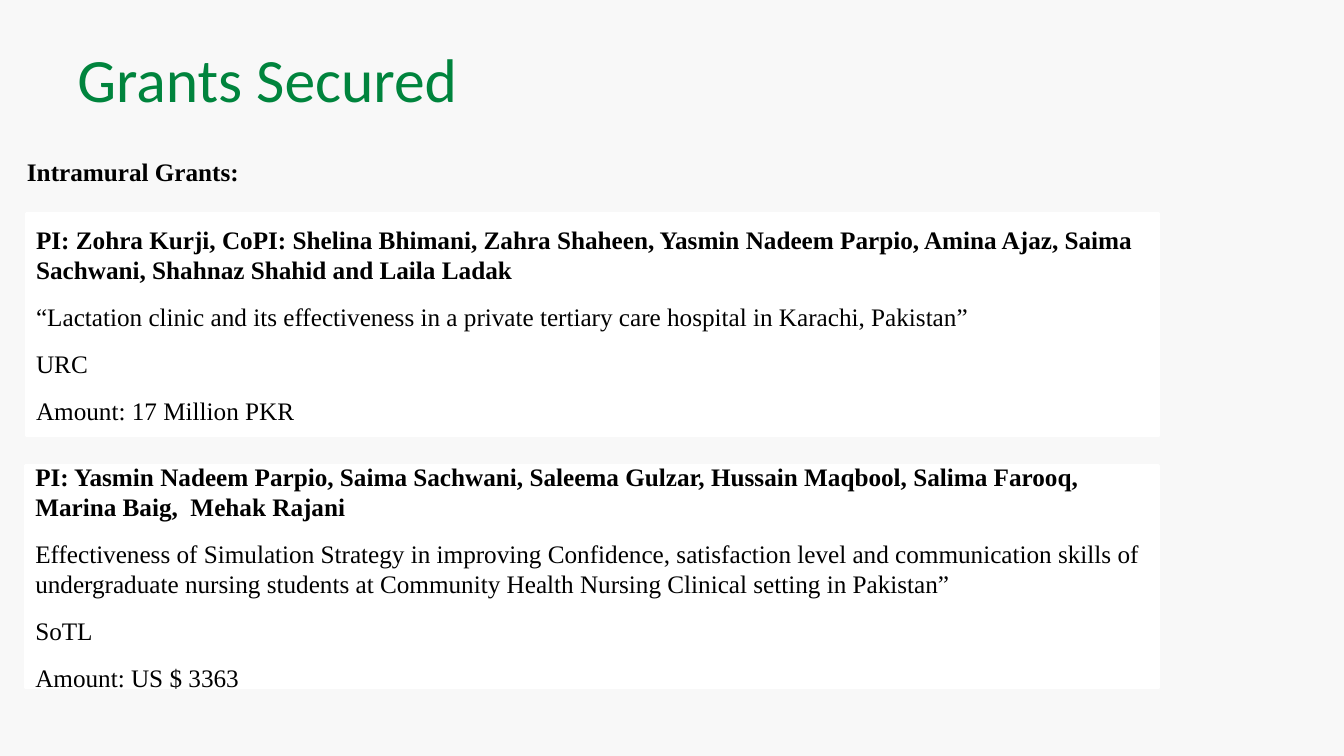
"""Builds the "Grants Secured" slide with two intramural grant panels."""
from pptx import Presentation
from pptx.dml.color import RGBColor
from pptx.enum.shapes import MSO_SHAPE
from pptx.enum.text import MSO_ANCHOR, PP_ALIGN
from pptx.util import Cm, Pt

TITLE = "Grants Secured"
HEADING = "Intramural Grants:"
GRANTS = [
    (0.66, 5.38, [
        "PI: Zohra Kurji, CoPI: Shelina Bhimani, Zahra Shaheen, Yasmin Nadeem Parpio, "
        "Amina Ajaz, Saima Sachwani, Shahnaz Shahid and Laila Ladak",
        "“Lactation clinic and its effectiveness in a private tertiary care hospital "
        "in Karachi, Pakistan”",
        "URC",
        "Amount: 17 Million PKR",
    ]),
    (0.64, 11.73, [
        "PI: Yasmin Nadeem Parpio, Saima Sachwani, Saleema Gulzar, Hussain Maqbool, "
        "Salima Farooq, Marina Baig,  Mehak Rajani",
        "Effectiveness of Simulation Strategy in improving Confidence, satisfaction level "
        "and communication skills of undergraduate nursing students at Community Health "
        "Nursing Clinical setting in Pakistan”",
        "SoTL",
        "Amount: US $ 3363",
    ]),
]

BACKGROUND = RGBColor(0xF8, 0xF8, 0xF8)
GREEN = RGBColor(0x00, 0x84, 0x3D)
BLACK = RGBColor(0, 0, 0)
WHITE = RGBColor(0xFF, 0xFF, 0xFF)
PANEL_WIDTH, PANEL_HEIGHT = 28.55, 5.61


def write(shape, lines, font_name, size, color, anchor, bold_first=False):
    """Fill a shape with one paragraph per line."""
    frame = shape.text_frame
    frame.word_wrap = True
    frame.vertical_anchor = anchor
    frame.text = "\n".join(lines)
    for index, paragraph in enumerate(frame.paragraphs):
        paragraph.alignment = PP_ALIGN.LEFT
        paragraph.space_after = Pt(12)
        paragraph.font.name = font_name
        paragraph.font.size = Pt(size)
        paragraph.font.color.rgb = color
        paragraph.font.bold = bold_first and index == 0


def main():
    """Lay out the title, heading and grant panels."""
    presentation = Presentation()
    presentation.slide_width, presentation.slide_height = Cm(33.87), Cm(19.05)
    slide = presentation.slides.add_slide(presentation.slide_layouts[6])
    slide.background.fill.solid()
    slide.background.fill.fore_color.rgb = BACKGROUND

    title = slide.shapes.add_textbox(Cm(1.7), Cm(0.76), Cm(30.48), Cm(2.41))
    write(title, [TITLE], "Calibri", 44, GREEN, MSO_ANCHOR.MIDDLE)

    heading = slide.shapes.add_textbox(Cm(0.43), Cm(3.81), Cm(18.19), Cm(1.03))
    write(heading, [HEADING], "Times New Roman", 18, BLACK, MSO_ANCHOR.TOP, True)

    for left, top, lines in GRANTS:
        panel = slide.shapes.add_shape(
            MSO_SHAPE.RECTANGLE, Cm(left), Cm(top), Cm(PANEL_WIDTH), Cm(PANEL_HEIGHT))
        panel.shadow.inherit = False
        panel.fill.solid()
        panel.fill.fore_color.rgb = WHITE
        panel.line.color.rgb = WHITE
        panel.line.width = Pt(2)
        write(panel, lines, "Times New Roman", 18, BLACK, MSO_ANCHOR.MIDDLE, True)

    presentation.save("out.pptx")


if __name__ == "__main__":
    main()
